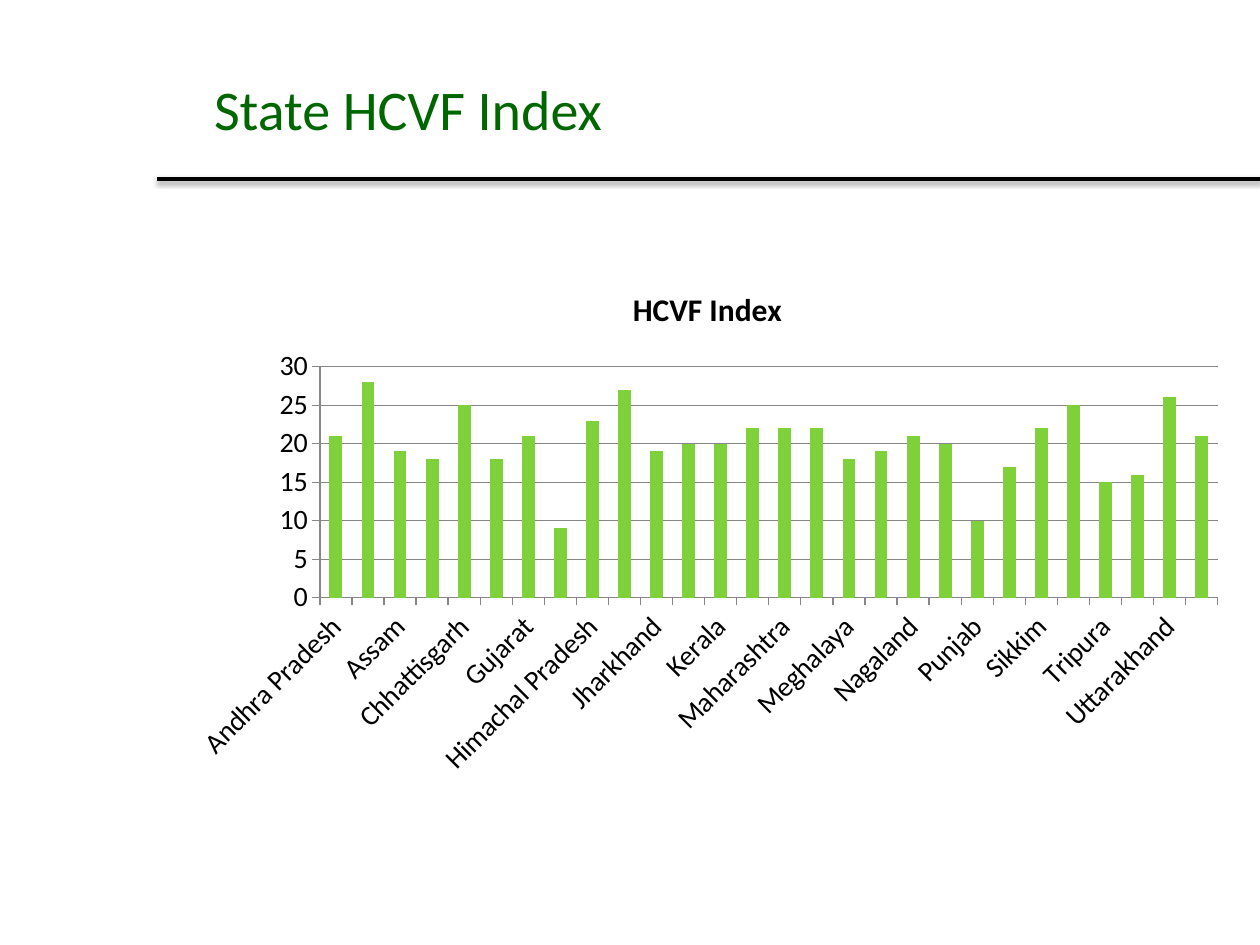
from dataclasses import dataclass

from lxml.etree import SubElement
from pptx import Presentation
from pptx.chart.data import CategoryChartData
from pptx.dml.color import RGBColor
from pptx.enum.chart import XL_CHART_TYPE, XL_TICK_MARK
from pptx.enum.shapes import MSO_CONNECTOR
from pptx.enum.text import MSO_ANCHOR, PP_ALIGN
from pptx.oxml.ns import qn
from pptx.util import Emu, Pt

EMU_PER_PX = 914400 / 126
FONT = "Calibri"
BLACK = "000000"
GRID = "878787"
TITLE_GREEN = "006600"
BAR_GREEN = "7FD13B"


@dataclass(frozen=True)
class Area:
    left: int
    top: int
    width: int
    height: int


@dataclass(frozen=True)
class StateScore:
    state: str
    index: int


SCORES = [
    StateScore("Andhra Pradesh", 21),
    StateScore("Arunachal Pradesh", 28),
    StateScore("Assam", 19),
    StateScore("Bihar", 18),
    StateScore("Chhattisgarh", 25),
    StateScore("Goa", 18),
    StateScore("Gujarat", 21),
    StateScore("Haryana", 9),
    StateScore("Himachal Pradesh", 23),
    StateScore("Jammu and Kashmir", 27),
    StateScore("Jharkhand", 19),
    StateScore("Karnataka", 20),
    StateScore("Kerala", 20),
    StateScore("Madhya Pradesh", 22),
    StateScore("Maharashtra", 22),
    StateScore("Manipur", 22),
    StateScore("Meghalaya", 18),
    StateScore("Mizoram", 19),
    StateScore("Nagaland", 21),
    StateScore("Orissa", 20),
    StateScore("Punjab", 10),
    StateScore("Rajasthan", 17),
    StateScore("Sikkim", 22),
    StateScore("Tamil Nadu", 25),
    StateScore("Tripura", 15),
    StateScore("Uttar Pradesh", 16),
    StateScore("Uttarakhand", 26),
    StateScore("West Bengal", 21),
]


def px(length: int) -> Emu:
    return Emu(round(length * EMU_PER_PX))


def color(value: str) -> RGBColor:
    return RGBColor.from_string(value)


def style_font(font, size: int, value: str, bold: bool = False) -> None:
    font.name = FONT
    font.size = Pt(size)
    font.bold = bold
    font.color.rgb = color(value)


def add_title(slide, area: Area, text: str) -> None:
    title = slide.shapes.title
    title.left, title.top = px(area.left), px(area.top)
    title.width, title.height = px(area.width), px(area.height)
    frame = title.text_frame
    frame.word_wrap = True
    frame.vertical_anchor = MSO_ANCHOR.MIDDLE
    frame.margin_left = px(25)
    para = frame.paragraphs[0]
    para.alignment = PP_ALIGN.LEFT
    span = para.add_run()
    span.text = text
    style_font(span.font, 32, TITLE_GREEN)


def add_rule(slide, left: int, right: int, top: int) -> None:
    rule = slide.shapes.add_connector(
        MSO_CONNECTOR.STRAIGHT, px(left), px(top), px(right), px(top)
    )
    rule.line.color.rgb = color(BLACK)
    rule.line.width = Pt(2)
    effects = SubElement(rule._element.spPr, qn("a:effectLst"))
    shadow = SubElement(
        effects, qn("a:outerShdw"),
        blurRad=str(Pt(3.1)), dist=str(Pt(1.6)), dir="5400000", rotWithShape="0",
    )
    shade = SubElement(shadow, qn("a:srgbClr"), val=BLACK)
    SubElement(shade, qn("a:alpha"), val="38000")


def style_axis(axis) -> None:
    axis.major_tick_mark = XL_TICK_MARK.OUTSIDE
    axis.minor_tick_mark = XL_TICK_MARK.NONE
    axis.format.line.color.rgb = color(GRID)
    style_font(axis.tick_labels.font, 16, BLACK)


def add_index_chart(slide, area: Area, title: str) -> None:
    data = CategoryChartData(number_format="General")
    data.categories = [score.state for score in SCORES]
    data.add_series("Series 1", [score.index for score in SCORES])
    chart = slide.shapes.add_chart(
        XL_CHART_TYPE.COLUMN_CLUSTERED,
        px(area.left), px(area.top), px(area.width), px(area.height), data,
    ).chart
    style_font(chart.font, 10, BLACK)
    chart.has_legend = False
    chart.has_title = True
    chart.chart_title.include_in_layout = False
    span = chart.chart_title.text_frame.paragraphs[0].add_run()
    span.text = title
    style_font(span.font, 18, BLACK, bold=True)

    style_axis(chart.category_axis)
    style_axis(chart.value_axis)
    chart.value_axis.has_major_gridlines = True
    chart.value_axis.major_gridlines.format.line.color.rgb = color(GRID)
    chart.value_axis.tick_labels.number_format = "0"
    chart.value_axis.tick_labels.number_format_is_linked = False

    plot = chart.plots[0]
    plot.gap_width = 150
    plot.vary_by_categories = False
    fill = plot.series[0].format.fill
    fill.solid()
    fill.fore_color.rgb = color(BAR_GREEN)


def main() -> None:
    deck = Presentation()
    deck.slide_width, deck.slide_height = px(1260), px(945)
    page = deck.slides.add_slide(deck.slide_layouts[5])
    add_rule(page, 157, 1260, 179)
    add_title(page, Area(189, 38, 1029, 141), "State HCVF Index")
    add_index_chart(page, Area(176, 265, 1063, 522), "HCVF Index")
    deck.save("out.pptx")


if __name__ == "__main__":
    main()
